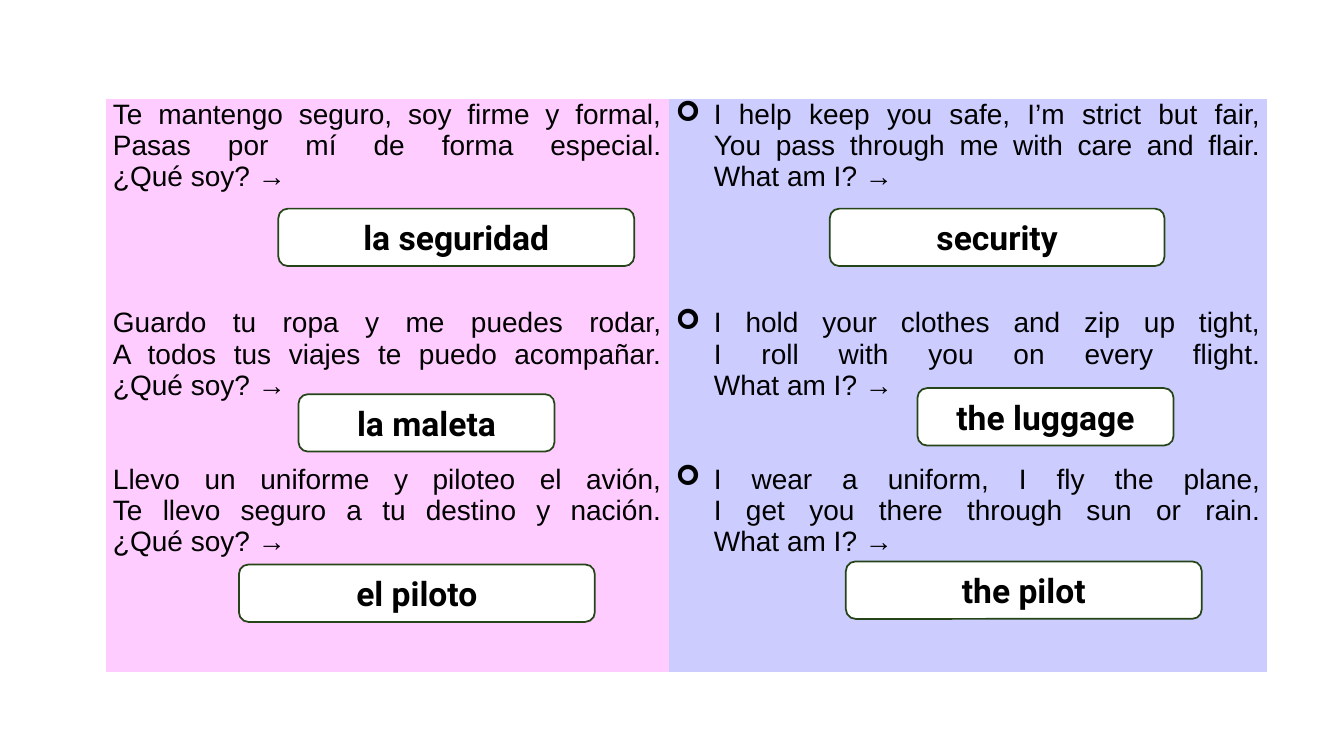
from dataclasses import dataclass
from itertools import accumulate

from lxml.etree import SubElement
from pptx import Presentation
from pptx.dml.color import RGBColor
from pptx.enum.shapes import MSO_SHAPE
from pptx.enum.text import MSO_ANCHOR, PP_ALIGN
from pptx.oxml.ns import qn
from pptx.util import Inches, Pt

SLIDE_WIDTH, SLIDE_HEIGHT = Inches(13.33), Inches(7.5)
PLAIN_TABLE_STYLE = "{2D5ABB26-0587-4C30-8999-92F81FD0307C}"


@dataclass(frozen=True)
class Theme:
    spanish_fill: RGBColor = RGBColor(0xFF, 0xCC, 0xFF)
    english_fill: RGBColor = RGBColor(0xCC, 0xCC, 0xFF)
    answer_fill: RGBColor = RGBColor(0xFF, 0xFF, 0xFF)
    answer_line: RGBColor = RGBColor(0x25, 0x45, 0x19)
    text: RGBColor = RGBColor(0, 0, 0)
    riddle_font: str = "Arial"
    answer_font: str = "Roboto"
    riddle_size: Pt = Pt(20)
    answer_size: Pt = Pt(24)
    answer_line_width: Pt = Pt(1.25)


@dataclass(frozen=True)
class Riddle:
    text: str
    answer: str
    # Place of the answer inside its cell, in percent of the slide
    left: float
    top: float
    width: float


THEME = Theme()

# Grid of the riddle table, in percent of the slide
TABLE_LEFT, TABLE_TOP = 7.88, 13.07
COLUMN_WIDTHS = (41.86, 44.56)
ROW_HEIGHTS = (27.6, 20.67, 27.6)
ANSWER_HEIGHT = 7.6
COLUMN_FILLS = (THEME.spanish_fill, THEME.english_fill)
ENGLISH_COLUMN = 1

RIDDLES = (
    (
        Riddle("Te mantengo seguro, soy firme y formal,\n"
               "Pasas por mí de forma especial.\n¿Qué soy? →",
               "la seguridad", 12.83, 14.53, 26.48),
        Riddle("I help keep you safe, I’m strict but fair,\n"
               "You pass through me with care and flair.\nWhat am I? →",
               "security", 12, 14.53, 24.91),
    ),
    (
        Riddle("Guardo tu ropa y me puedes rodar,\n"
               "A todos tus viajes te puedo acompañar.\n¿Qué soy? →",
               "la maleta", 14.33, 11.47, 19.05),
        Riddle("I hold your clothes and zip up tight,\n"
               "I roll with you on every flight.\nWhat am I? →",
               "the luggage", 18.53, 10.67, 19.05),
    ),
    (
        Riddle("Llevo un uniforme y piloteo el avión,\n"
               "Te llevo seguro a tu destino y nación.\n¿Qué soy? →",
               "el piloto", 9.9, 13.33, 26.48),
        Riddle("I wear a uniform, I fly the plane,\n"
               "I get you there through sun or rain.\nWhat am I? →",
               "the pilot", 13.2, 12.93, 26.48),
    ),
)


def across(percent):
    return round(SLIDE_WIDTH * percent / 100)


def down(percent):
    return round(SLIDE_HEIGHT * percent / 100)


def write_paragraph(paragraph, text, alignment, font_name, size, bold=False):
    paragraph.text = text
    paragraph.alignment = alignment
    for run in paragraph.runs:
        run.font.name = font_name
        run.font.size = size
        run.font.bold = bold
        run.font.color.rgb = THEME.text


def add_arrow_bullet(paragraph):
    properties = paragraph._p.get_or_add_pPr()
    properties.set("marL", str(Inches(0.38)))
    properties.set("indent", str(-Inches(0.38)))
    SubElement(properties, qn("a:buFont"), typeface="Wingdings")
    SubElement(properties, qn("a:buChar"), char="➢")


def fill_riddle_cell(cell, riddle, column):
    cell.fill.solid()
    cell.fill.fore_color.rgb = COLUMN_FILLS[column]
    cell.margin_left = cell.margin_right = Inches(0.07)
    cell.margin_top = cell.margin_bottom = 0
    paragraph = cell.text_frame.paragraphs[0]
    write_paragraph(paragraph, riddle.text, PP_ALIGN.JUSTIFY,
                    THEME.riddle_font, THEME.riddle_size)
    if column == ENGLISH_COLUMN:
        add_arrow_bullet(paragraph)


def add_riddle_table(slide, left, top):
    frame = slide.shapes.add_table(
        len(ROW_HEIGHTS), len(COLUMN_WIDTHS), across(left), down(top),
        across(sum(COLUMN_WIDTHS)), down(sum(ROW_HEIGHTS)))
    table = frame.table
    table.first_row = table.horz_banding = False
    for style in frame._element.iter(qn("a:tableStyleId")):
        style.text = PLAIN_TABLE_STYLE
    for column, width in zip(table.columns, COLUMN_WIDTHS):
        column.width = across(width)
    for row, height in zip(table.rows, ROW_HEIGHTS):
        row.height = down(height)
    for row_index, row_riddles in enumerate(RIDDLES):
        for column_index, riddle in enumerate(row_riddles):
            fill_riddle_cell(table.cell(row_index, column_index), riddle, column_index)


def add_answer(slide, riddle, cell_left, cell_top):
    shape = slide.shapes.add_shape(
        MSO_SHAPE.ROUNDED_RECTANGLE,
        across(cell_left + riddle.left), down(cell_top + riddle.top),
        across(riddle.width), down(ANSWER_HEIGHT))
    shape.shadow.inherit = False
    shape.fill.solid()
    shape.fill.fore_color.rgb = THEME.answer_fill
    shape.line.color.rgb = THEME.answer_line
    shape.line.width = THEME.answer_line_width
    shape.text_frame.vertical_anchor = MSO_ANCHOR.MIDDLE
    write_paragraph(shape.text_frame.paragraphs[0], riddle.answer, PP_ALIGN.CENTER,
                    THEME.answer_font, THEME.answer_size, bold=True)


def add_answers(slide, left, top):
    cell_lefts = tuple(accumulate(COLUMN_WIDTHS[:-1], initial=left))
    cell_tops = accumulate(ROW_HEIGHTS[:-1], initial=top)
    for cell_top, row_riddles in zip(cell_tops, RIDDLES):
        for cell_left, riddle in zip(cell_lefts, row_riddles):
            add_answer(slide, riddle, cell_left, cell_top)


def main():
    presentation = Presentation()
    presentation.slide_width = SLIDE_WIDTH
    presentation.slide_height = SLIDE_HEIGHT
    blank_layout = presentation.slide_layouts[6]
    slide = presentation.slides.add_slide(blank_layout)
    # Riddles in both languages
    add_riddle_table(slide, TABLE_LEFT, TABLE_TOP)
    # Answer cards over the cells
    add_answers(slide, TABLE_LEFT, TABLE_TOP)
    presentation.save("out.pptx")


if __name__ == "__main__":
    main()
